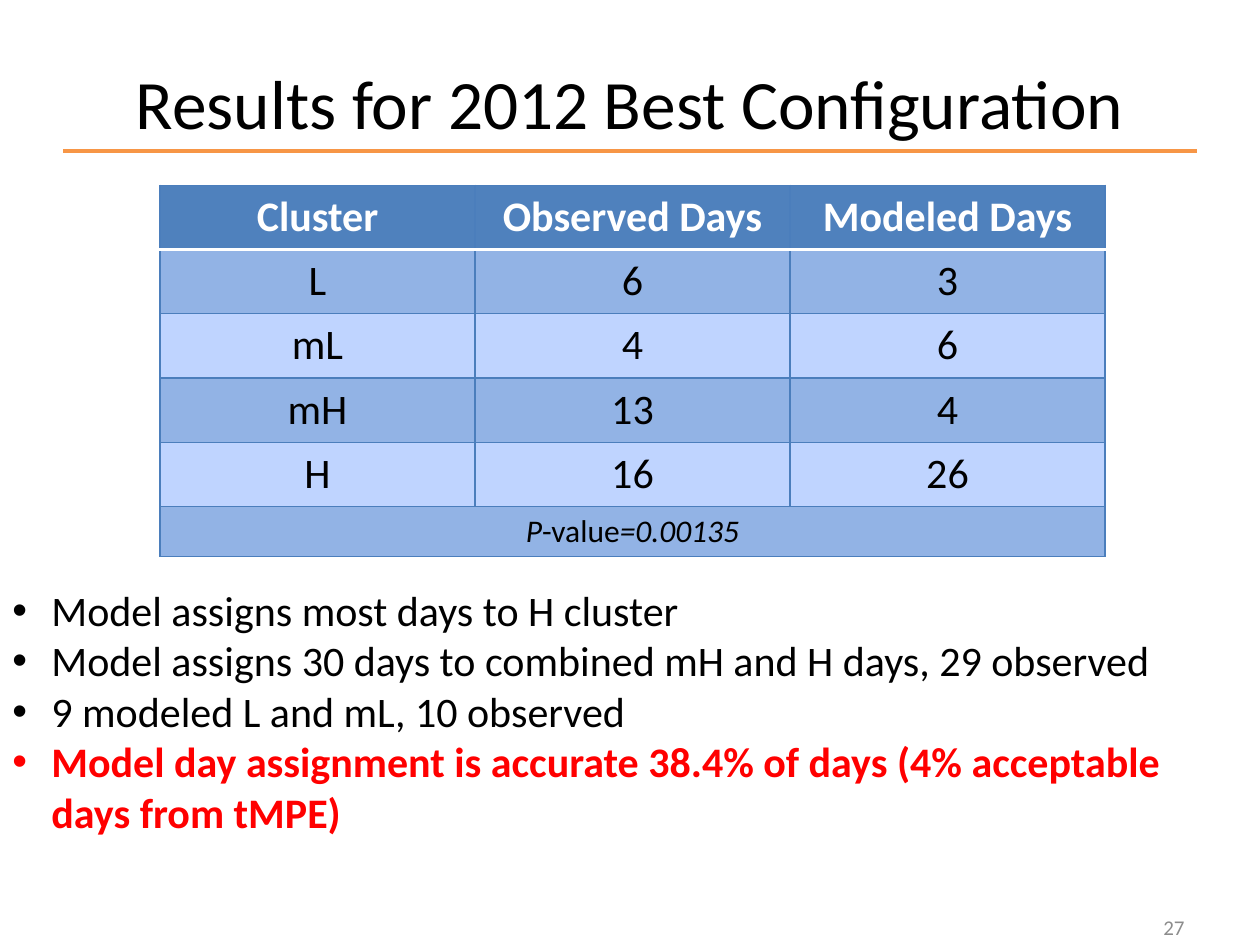
from lxml import etree
from pptx import Presentation
from pptx import util as u
from pptx.dml.color import RGBColor
from pptx.enum import shapes, text
from pptx.oxml import ns

COLORS = {
    "black": "000000", "white": "FFFFFF", "red": "FF0000", "gray": "8C8C8C",
    "orange": "F79646", "header": "4F81BD", "border": "4B7EBC",
    "dark_band": "92B3E5", "light_band": "BFD4FF",
}
ROWS = [
    ("Cluster", "Observed Days", "Modeled Days"),
    ("L", "6", "3"),
    ("mL", "4", "6"),
    ("mH", "13", "4"),
    ("H", "16", "26"),
]
P_VALUE = [("P", True), ("-value", False), ("=0.00135", True)]
FINDINGS = [
    "Model assigns most days to H cluster",
    "Model assigns 30 days to combined mH and H days, 29 observed",
    "9 modeled L and mL, 10 observed",
    "Model day assignment is accurate 38.4% of days (4% acceptable days from tMPE)",
]


class SlideBuilder:
    """Holds the style and the current slide, and adds elements to it."""

    def __init__(self, slide, font="Calibri"):
        self.slide = slide
        self.font = font

    def color(self, name):
        return RGBColor.from_string(COLORS[name])

    def style(self, font, size, color="black", bold=False, italic=False):
        font.name = self.font
        font.size = u.Pt(size)
        font.bold = bold
        font.italic = italic
        font.color.rgb = self.color(color)

    def line(self, left, top, right, color, width):
        connector = self.slide.shapes.add_connector(
            shapes.MSO_CONNECTOR.STRAIGHT,
            u.Inches(left), u.Inches(top), u.Inches(right), u.Inches(top))
        connector.line.color.rgb = self.color(color)
        connector.line.width = u.Pt(width)
        etree.SubElement(connector._element.spPr, ns.qn("a:effectLst"))

    def text_box(self, box, content, size, color="black", align=text.PP_ALIGN.LEFT,
                 anchor=text.MSO_ANCHOR.MIDDLE):
        shape = self.slide.shapes.add_textbox(*map(u.Inches, box))
        frame = shape.text_frame
        frame.word_wrap = True
        frame.vertical_anchor = anchor
        frame.text = content
        for paragraph in frame.paragraphs:
            paragraph.alignment = align
            for run in paragraph.runs:
                self.style(run.font, size, color)
        return frame

    def bullets(self, box, items, size, indent):
        frame = self.text_box(box, "\n".join(items), size, anchor=text.MSO_ANCHOR.TOP)
        for paragraph in frame.paragraphs:
            properties = paragraph._p.get_or_add_pPr()
            properties.set("marL", str(u.Inches(indent)))
            properties.set("indent", str(-u.Inches(indent)))
            etree.SubElement(properties, ns.qn("a:buFont"), typeface="Arial")
            etree.SubElement(properties, ns.qn("a:buChar"), char="•")
        self.style(frame.paragraphs[-1].runs[0].font, size, "red", bold=True)

    def borders(self, cell, **edges):
        properties = cell._tc.get_or_add_tcPr()
        for index, side in enumerate("LRTB"):
            color, width = edges.get(side, ("border", 0.75))
            line = etree.Element(ns.qn(f"a:ln{side}"), w=str(u.Pt(width)))
            fill = etree.SubElement(line, ns.qn("a:solidFill"))
            etree.SubElement(fill, ns.qn("a:srgbClr"), val=COLORS[color])
            properties.insert(index, line)

    def cell(self, cell, runs, size, fill, color="black", bold=False):
        cell.fill.solid()
        cell.fill.fore_color.rgb = self.color(fill)
        paragraph = cell.text_frame.paragraphs[0]
        paragraph.alignment = text.PP_ALIGN.CENTER
        for content, italic in runs:
            run = paragraph.add_run()
            run.text = content
            self.style(run.font, size, color, bold, italic)

    def table(self, left, top, column_width, row_height, rows, footer, footer_height):
        columns, last = len(rows[0]), len(rows)
        table = self.slide.shapes.add_table(
            last + 1, columns, u.Inches(left), u.Inches(top),
            u.Inches(column_width * columns),
            u.Inches(row_height * last + footer_height)).table
        for column in table.columns:
            column.width = u.Inches(column_width)
        for row in table.rows:
            row.height = u.Inches(row_height)
        table.rows[last].height = u.Inches(footer_height)

        rule = ("white", 2)
        for r, values in enumerate(rows):
            band = "dark_band" if r % 2 else "light_band"
            for c, value in enumerate(values):
                cell = table.cell(r, c)
                if r == 0:
                    self.cell(cell, [(value, False)], 24, "header", "white", bold=True)
                    self.borders(cell, B=rule)
                else:
                    self.cell(cell, [(value, False)], 24, band)
                    self.borders(cell, **({"T": rule} if r == 1 else {}))
        table.cell(last, 0).merge(table.cell(last, columns - 1))
        self.cell(table.cell(last, 0), footer, 18, "dark_band")
        for c in range(columns):
            self.borders(table.cell(last, c))


def main():
    presentation = Presentation()
    presentation.slide_width = u.Inches(10)
    presentation.slide_height = u.Inches(7.5)
    builder = SlideBuilder(presentation.slides.add_slide(presentation.slide_layouts[6]))

    builder.line(0.5, 1.2, 9.5, "orange", 2)
    builder.text_box((0.5, 0.42, 9, 0.77), "Results for 2012 Best Configuration", 39.6,
                     align=text.PP_ALIGN.CENTER)
    builder.table(1.27, 1.47, 2.5, 0.51, ROWS, P_VALUE, 0.4)
    builder.bullets((0, 4.59, 10, 2.12), FINDINGS, 24, 0.31)
    builder.text_box((7.17, 7.21, 2.33, 0.29), "27", 12, "gray", text.PP_ALIGN.RIGHT)
    presentation.save("out.pptx")


if __name__ == "__main__":
    main()
